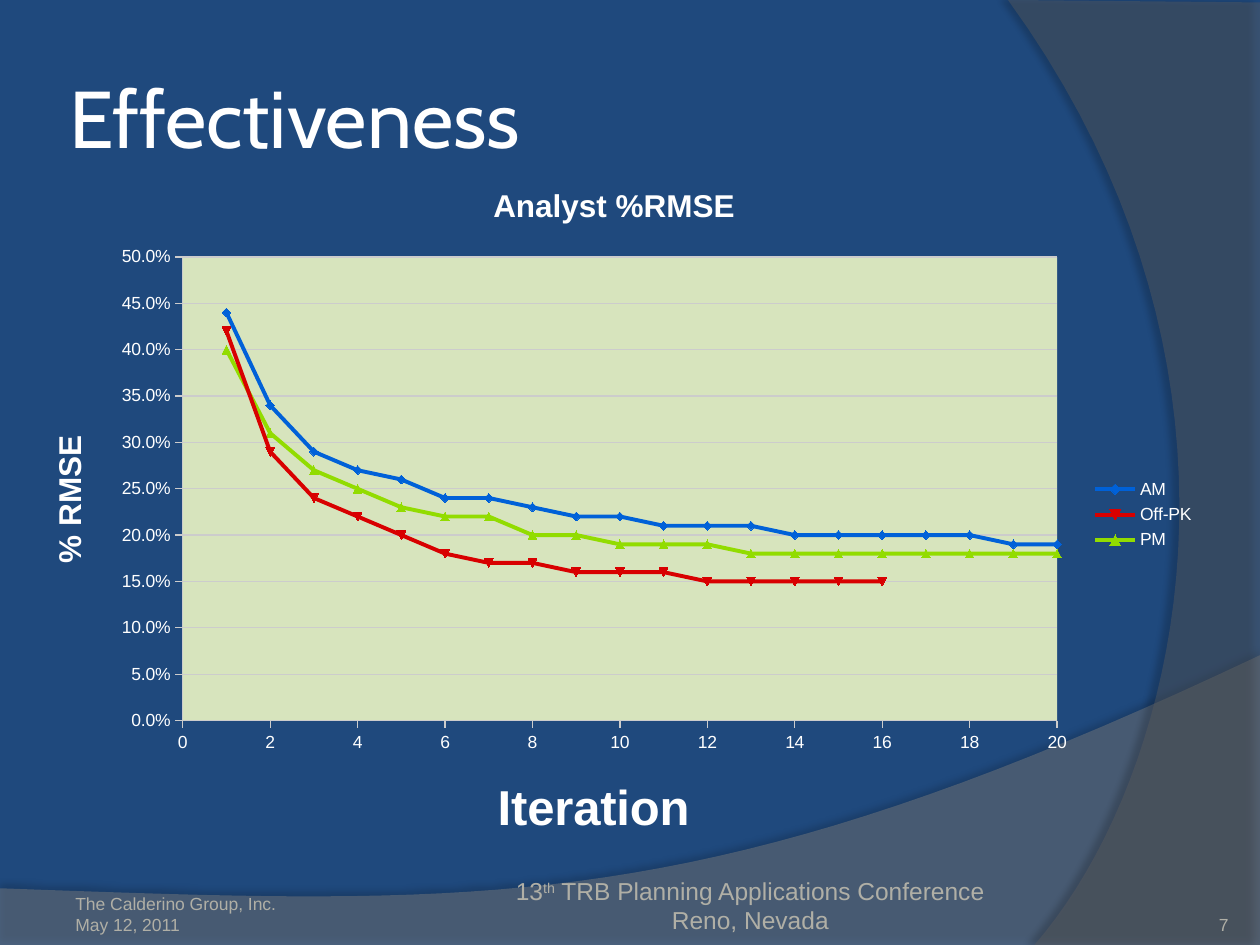
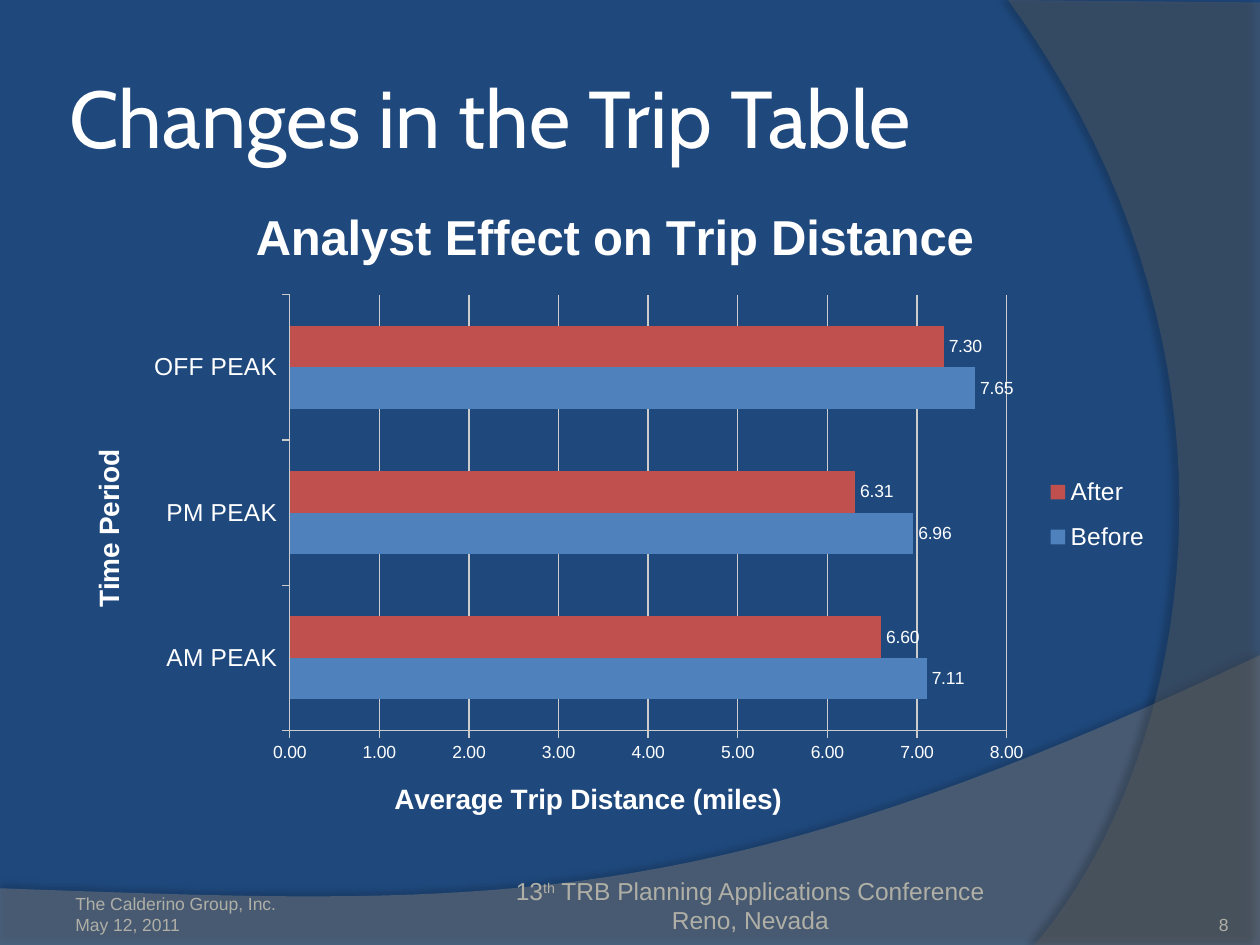
from dataclasses import dataclass

from lxml import etree
from pptx import Presentation
from pptx.chart.data import CategoryChartData, XyChartData
from pptx.dml.color import RGBColor
from pptx.enum.chart import (XL_CHART_TYPE as ChartType, XL_LABEL_POSITION as LabelPosition,
                             XL_LEGEND_POSITION as LegendPosition,
                             XL_MARKER_STYLE as Marker, XL_TICK_MARK as Tick)
from pptx.enum.text import MSO_ANCHOR as Anchor, PP_ALIGN as Align
from pptx.oxml import parse_xml
from pptx.oxml.ns import nsdecls, qn
from pptx.util import Inches, Pt

NAVY = RGBColor(0x1F, 0x49, 0x7D)
WHITE = RGBColor(0xFF, 0xFF, 0xFF)
FOOTER_GREY = RGBColor(0xB0, 0xAF, 0xA6)
SWOOSH_GREY = RGBColor(0x7F, 0x7F, 0x7F)
ARC_GREY = RGBColor(0x5E, 0x5E, 0x5E)
GRID_GREY = RGBColor(0xCC, 0xCC, 0xCC)
PLOT_GREEN = RGBColor(0xD7, 0xE4, 0xBD)
AM_BLUE = RGBColor(0x00, 0x61, 0xD8)
OFF_PEAK_RED = RGBColor(0xD8, 0x00, 0x00)
PM_GREEN = RGBColor(0x92, 0xDC, 0x00)
BEFORE_BLUE = RGBColor(0x4F, 0x81, 0xBD)
AFTER_RED = RGBColor(0xC0, 0x50, 0x4D)

TITLE_FONT, BODY_FONT = "Cabin", "Arial"
Point = tuple[float, float]
Box = tuple[float, ...]


@dataclass(frozen=True)
class Band:
    lead: tuple[Point, ...]      # straight part; its last point starts the curve
    curve: tuple[Point, Point, Point]
    color: RGBColor
    opacity: int
    shadow_opacity: int
    shadow_distance: float
    shadow_angle: int


@dataclass(frozen=True)
class Heading:
    text: str
    size: int
    at: Point


@dataclass(frozen=True)
class ChartLayout:
    frame: Box
    plot: Box
    legend: Box
    legend_size: int
    title: Heading
    category_title: Heading
    value_title: Heading


BANDS = (
    Band(((0, 7.05), (0, 7.51), (10, 7.51), (10, 5.2)),
         ((5.59, 7.29), (3.91, 7.19), (0, 7.05)), SWOOSH_GREY, 45, 35, 3.5, 270),
    Band(((10, 0.02), (10, 7.5), (8.21, 7.5)),
         ((9.35, 6.19), (10.18, 3), (8, 0)), ARC_GREY, 40, 45, 4, 180),
)

RMSE_LAYOUT = ChartLayout(
    frame=(0.17, 1.25, 9.42, 5.67), plot=(1.45, 2.04, 6.94, 3.68),
    legend=(8.65, 3.76, 0.85, 0.65), legend_size=10,
    title=Heading("Analyst %RMSE", 18, (3.87, 1.42)),
    category_title=Heading("Iteration", 28, (3.88, 6.09)),
    value_title=Heading("% RMSE", 18, (0.34, 3.41)))

DISTANCE_LAYOUT = ChartLayout(
    frame=(0.5, 1.42, 8.75, 5.28), plot=(2.3, 2.34, 5.69, 3.46),
    legend=(8.3, 3.66, 0.82, 0.85), legend_size=14,
    title=Heading("Analyst Effect on Trip Distance", 28, (1.96, 1.57)),
    category_title=Heading("Time Period", 16, (0.68, 3.53)),
    value_title=Heading("Average Trip Distance (miles)", 16, (3.09, 6.16)))

# Share of RMSE after each iteration, with line colour and marker
RMSE_SERIES = {
    "AM": ((0.44, 0.34, 0.29, 0.27, 0.26, 0.24, 0.24, 0.23, 0.22, 0.22,
            0.21, 0.21, 0.21, 0.2, 0.2, 0.2, 0.2, 0.2, 0.19, 0.19),
           AM_BLUE, Marker.DIAMOND),
    "Off-PK": ((0.42, 0.29, 0.24, 0.22, 0.2, 0.18, 0.17, 0.17, 0.16, 0.16,
                0.16, 0.15, 0.15, 0.15, 0.15, 0.15),
               OFF_PEAK_RED, Marker.AUTOMATIC),
    "PM": ((0.4, 0.31, 0.27, 0.25, 0.23, 0.22, 0.22, 0.2, 0.2, 0.19,
            0.19, 0.19, 0.18, 0.18, 0.18, 0.18, 0.18, 0.18, 0.18, 0.18),
           PM_GREEN, Marker.TRIANGLE),
}

PERIODS = ("AM PEAK", "PM PEAK", "OFF PEAK")
DISTANCE_SERIES = {
    "Before": ((7.11, 6.96, 7.65), BEFORE_BLUE),
    "After": ((6.60, 6.31, 7.30), AFTER_RED),
}


def write(paragraph, text: str, *, size: float, color: RGBColor = WHITE,
          font: str = BODY_FONT, bold: bool = False, align=None, raised: bool = False) -> None:
    run = paragraph.add_run()
    run.text = text
    run.font.size, run.font.name, run.font.bold = Pt(size), font, bold
    run.font.color.rgb = color
    if align is not None:
        paragraph.alignment = align
    if raised:
        run.font._element.set("baseline", "30000")


def set_frame(frame, anchor, margins: Box) -> None:
    frame.word_wrap = True
    frame.vertical_anchor = anchor
    (frame.margin_left, frame.margin_top,
     frame.margin_right, frame.margin_bottom) = map(Inches, margins)


# Background bands
def bezier(start: Point, curve: tuple[Point, Point, Point], steps: int = 40) -> list[Point]:
    points = []
    for step in range(1, steps + 1):
        t = step / steps
        weights = ((1 - t) ** 3, 3 * t * (1 - t) ** 2, 3 * t ** 2 * (1 - t), t ** 3)
        points.append(tuple(sum(w * p[axis] for w, p in zip(weights, (start, *curve)))
                            for axis in (0, 1)))
    return points


def draw_band(slide, band: Band) -> None:
    outline = [*band.lead, *bezier(band.lead[-1], band.curve)]
    corners = [(Inches(x), Inches(y)) for x, y in outline]
    builder = slide.shapes.build_freeform(*corners[0])
    builder.add_line_segments(corners[1:], close=True)
    shape = builder.convert_to_shape()
    shape.fill.solid()
    shape.fill.fore_color.rgb = band.color
    shape.line.fill.background()
    tint = shape.element.spPr.find(qn("a:solidFill"))[0]
    etree.SubElement(tint, qn("a:alpha"), val=str(band.opacity * 1000))
    shape.element.spPr.append(parse_xml(
        f'<a:effectLst {nsdecls("a")}><a:outerShdw blurRad="{Pt(4)}" '
        f'dist="{Pt(band.shadow_distance)}" dir="{band.shadow_angle * 60000}" '
        f'rotWithShape="0"><a:srgbClr val="000000">'
        f'<a:alpha val="{band.shadow_opacity * 1000}"/></a:srgbClr>'
        f'</a:outerShdw></a:effectLst>'))
    slide.shapes.title.element.addprevious(shape.element)


# Footers
def add_footer(slide, left: float, width: float, margins: Box, lines, size: int, align) -> None:
    box = slide.shapes.add_textbox(*map(Inches, (left, 7.02, width, 0.4)))
    frame = box.text_frame
    set_frame(frame, Anchor.BOTTOM, margins)
    for index, pieces in enumerate(lines):
        paragraph = frame.add_paragraph() if index else frame.paragraphs[0]
        for piece in pieces:
            write(paragraph, piece, size=size, color=FOOTER_GREY, align=align,
                  raised=piece == "th")


def add_base_slide(deck, heading: str, number: int):
    slide = deck.slides.add_slide(deck.slide_layouts[5])
    title = slide.shapes.title
    title.left, title.top, title.width, title.height = map(Inches, (0.5, 0.3, 8.17, 1.25))
    set_frame(title.text_frame, Anchor.MIDDLE, (0.05,) * 4)
    write(title.text_frame.paragraphs[0], heading, size=46, font=TITLE_FONT, align=Align.LEFT)
    for band in BANDS:
        draw_band(slide, band)
    add_footer(slide, 0.5, 2.33, (0.1, 0.05, 0.1, 0),
               (("The Calderino Group, Inc.",), ("May 12, 2011",)), 10, Align.LEFT)
    add_footer(slide, 3.08, 5.75, (0, 0.05, 0, 0),
               (("13", "th", " TRB Planning Applications Conference"), ("Reno, Nevada",)),
               14, Align.CENTER)
    add_footer(slide, 8.92, 0.83, (0,) * 4, ((str(number),),), 10, Align.RIGHT)
    return slide


# Charts
def place(part, box: Box, frame: Box) -> None:
    """Fix a chart part at a slide position in inches: left, top and optionally size."""
    left, top, width, height = frame
    shares = ((box[0] - left) / width, (box[1] - top) / height,
              *(length / whole for length, whole in zip(box[2:], (width, height))))
    for former in part.findall(qn("c:layout")):
        part.remove(former)
    layout = etree.Element(qn("c:layout"))
    manual = etree.SubElement(layout, qn("c:manualLayout"))
    if part.tag == qn("c:plotArea"):
        etree.SubElement(manual, qn("c:layoutTarget"), val="inner")
    for mode in ("xMode", "yMode"):
        etree.SubElement(manual, qn(f"c:{mode}"), val="edge")
    for name, share in zip("xywh", shares):
        etree.SubElement(manual, qn(f"c:{name}"), val=f"{share:.4f}")
    leader = part.xpath("c:tx | c:legendPos")
    if leader:
        leader[0].addnext(layout)
    else:
        part.insert(0, layout)


def area_fill(color: RGBColor | None):
    paint = (f'<a:solidFill><a:srgbClr val="{color}"/></a:solidFill>' if color
             else "<a:noFill/>")
    return parse_xml(f'<c:spPr {nsdecls("c", "a")}>{paint}<a:ln><a:noFill/></a:ln></c:spPr>')


def set_heading(owner, heading: Heading, frame: Box, upright: bool = False) -> None:
    write(owner.text_frame.paragraphs[0], heading.text, size=heading.size, bold=True)
    if upright:
        body = owner.element.xpath(".//a:bodyPr")[0]
        body.set("rot", "-5400000")
        body.set("vert", "horz")
    place(owner.element, heading.at, frame)


def set_axis(axis, number_format: str | None = None, maximum: float | None = None,
             unit: float | None = None, grid: bool = False) -> None:
    axis.major_tick_mark, axis.minor_tick_mark = Tick.OUTSIDE, Tick.NONE
    axis.format.line.color.rgb = GRID_GREY
    axis.has_major_gridlines = grid
    if grid:
        axis.major_gridlines.format.line.color.rgb = GRID_GREY
    if number_format:
        axis.tick_labels.number_format = number_format
        axis.tick_labels.number_format_is_linked = False
        axis.minimum_scale, axis.maximum_scale, axis.major_unit = 0, maximum, unit


def add_chart(slide, kind, data, layout: ChartLayout, plot_fill: RGBColor | None = None):
    chart = slide.shapes.add_chart(kind, *map(Inches, layout.frame), data).chart
    chart.font.size, chart.font.name = Pt(10), BODY_FONT
    chart.font.color.rgb = WHITE
    chart.plots[0].vary_by_categories = False
    chart.has_title = chart.has_legend = True
    sideways = kind == ChartType.BAR_CLUSTERED
    set_heading(chart.chart_title, layout.title, layout.frame)
    set_heading(chart.category_axis.axis_title, layout.category_title, layout.frame, sideways)
    set_heading(chart.value_axis.axis_title, layout.value_title, layout.frame, not sideways)
    chart.legend.position = LegendPosition.RIGHT
    chart.legend.include_in_layout = False
    chart.legend.font.size = Pt(layout.legend_size)
    chart.legend.font.color.rgb = WHITE
    place(chart.element.xpath("c:chart/c:legend")[0], layout.legend, layout.frame)
    plot_area = chart.element.xpath("c:chart/c:plotArea")[0]
    place(plot_area, layout.plot, layout.frame)
    plot_area.append(area_fill(plot_fill))
    chart.element.find(qn("c:chart")).addnext(area_fill(None))
    return chart


def add_rmse_chart(slide) -> None:
    data = XyChartData(number_format="0.0%")
    for name, (shares, _, _) in RMSE_SERIES.items():
        points = data.add_series(name)
        for iteration, share in enumerate(shares, start=1):
            points.add_data_point(iteration, share)
    chart = add_chart(slide, ChartType.XY_SCATTER_LINES, data, RMSE_LAYOUT, PLOT_GREEN)
    set_axis(chart.category_axis, "0", 20, 2)
    set_axis(chart.value_axis, "0.0%", 0.5, 0.05, grid=True)
    for series, (_, color, marker) in zip(chart.plots[0].series, RMSE_SERIES.values()):
        series.format.line.color.rgb = color
        series.format.line.width = Pt(2.25)
        series.marker.style, series.marker.size = marker, 5
        series.marker.format.fill.solid()
        series.marker.format.fill.fore_color.rgb = color
        series.marker.format.line.color.rgb = color


def add_distance_chart(slide) -> None:
    data = CategoryChartData(number_format="0.00")
    data.categories = PERIODS
    for name, (miles, _) in DISTANCE_SERIES.items():
        data.add_series(name, miles)
    chart = add_chart(slide, ChartType.BAR_CLUSTERED, data, DISTANCE_LAYOUT)
    set_axis(chart.category_axis)
    chart.category_axis.tick_labels.font.size = Pt(14)
    chart.category_axis.tick_labels.font.color.rgb = WHITE
    set_axis(chart.value_axis, "0.00", 8, 1, grid=True)
    bars = chart.plots[0]
    bars.gap_width, bars.overlap = 150, 0
    for series, (_, color) in zip(bars.series, DISTANCE_SERIES.values()):
        series.format.fill.solid()
        series.format.fill.fore_color.rgb = color
        labels = series.data_labels
        labels.show_value = True
        labels.number_format, labels.number_format_is_linked = "0.00", False
        labels.position = LabelPosition.OUTSIDE_END
        labels.font.size = Pt(10)
        labels.font.color.rgb = WHITE


def main() -> None:
    deck = Presentation()
    deck.slide_width, deck.slide_height = Inches(10), Inches(7.5)
    backdrop = deck.slide_master.background.fill
    backdrop.solid()
    backdrop.fore_color.rgb = NAVY
    add_rmse_chart(add_base_slide(deck, "Effectiveness", 7))
    add_distance_chart(add_base_slide(deck, "Changes in the Trip Table", 8))
    deck.save("out.pptx")


if __name__ == "__main__":
    main()
